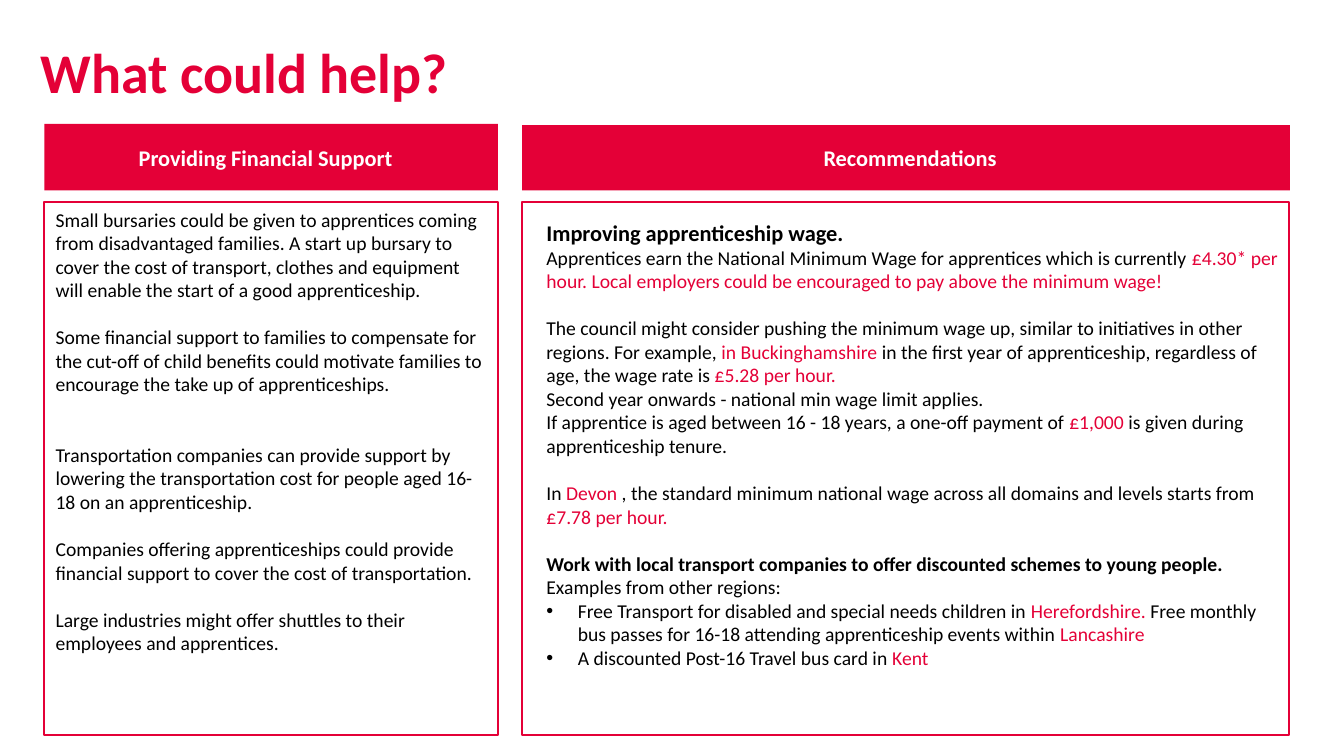
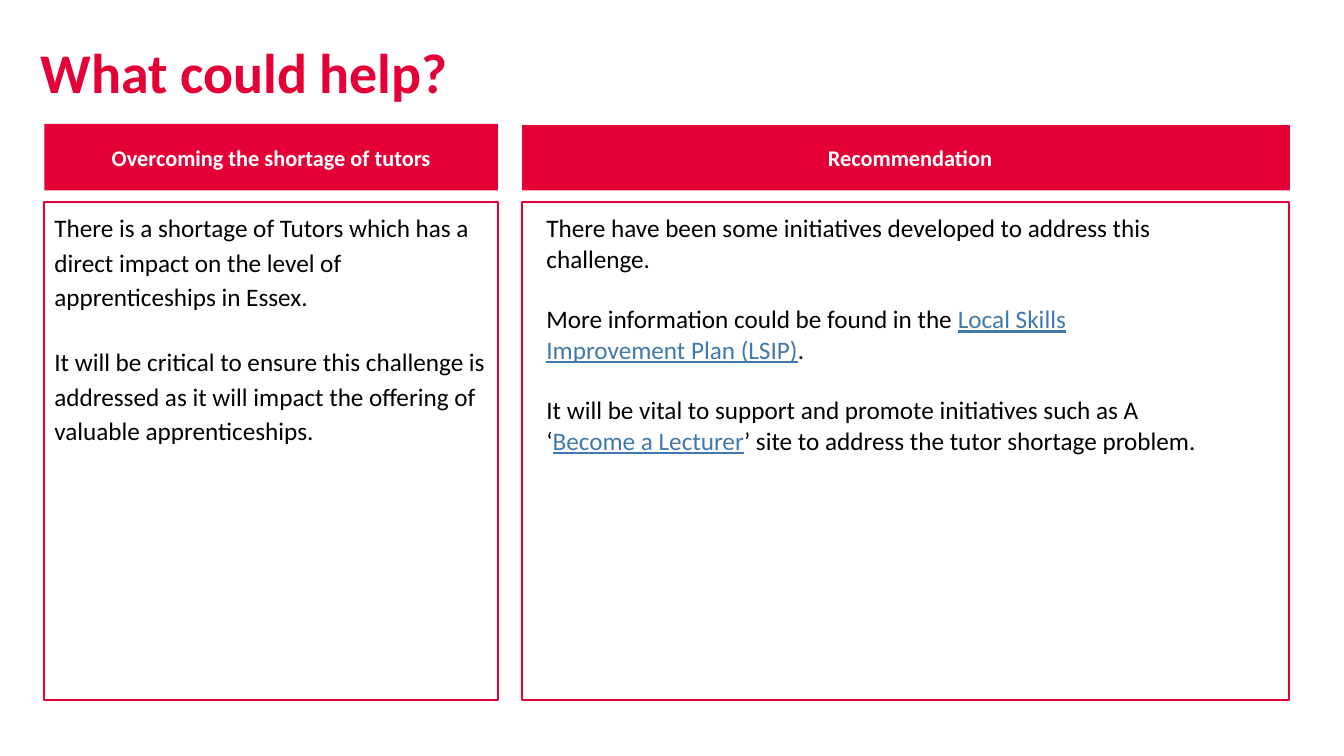
from dataclasses import dataclass

from lxml import etree
from pptx import Presentation
from pptx.dml.color import RGBColor
from pptx.enum.text import MSO_ANCHOR, MSO_AUTO_SIZE, PP_ALIGN
from pptx.oxml.ns import qn
from pptx.util import Cm, Pt

LEFT, CENTER = PP_ALIGN.LEFT, PP_ALIGN.CENTER
TOP, MIDDLE = MSO_ANCHOR.TOP, MSO_ANCHOR.MIDDLE
NO_FIT = MSO_AUTO_SIZE.NONE
COMPARISON_LAYOUT = 4


@dataclass(frozen=True)
class Theme:
    font: str = "Calibri"
    red: RGBColor = RGBColor(0xE4, 0x00, 0x37)
    link: RGBColor = RGBColor(0x41, 0x79, 0xAA)
    black: RGBColor = RGBColor(0, 0, 0)
    white: RGBColor = RGBColor(255, 255, 255)
    title: int = 40
    heading: int = 16
    body: int = 14
    large: int = 18
    frame: float = 1.5


theme = Theme()


def add_span(para, text, size=theme.body, color=theme.black, bold=False, underline=False):
    span = para.add_run()
    span.text = text
    span.font.name = theme.font
    span.font.size = Pt(size)
    span.font.color.rgb = color
    span.font.bold = bold
    span.font.underline = underline


def prepare(box, place, margins, anchor):
    """Place a placeholder and return its text frame."""
    box.left, box.top, box.width, box.height = [Cm(length) for length in place]
    frame = box.text_frame
    frame.word_wrap = True
    frame.auto_size = NO_FIT
    frame.vertical_anchor = anchor
    (frame.margin_left, frame.margin_top,
     frame.margin_right, frame.margin_bottom) = [Cm(length) for length in margins]
    return frame


# Shared geometry in centimetres: left, top, width, height
TITLE_PLACE = (1.02, 0.79, 14.45, 1.98)
BANDS = [(1.12, 3.12, 11.43, 1.68), (13.16, 3.15, 19.35, 1.65)]
FRAMES = [(1.12, 11.43), (13.16, 19.33)]
FRAME_TOP = 5.08
BULLET_INDENT = Cm(0.79)

# Gaps of one text line, in points
GAP = 16.8
LARGE_GAP = 21.8

# In each paragraph the spans alternate between plain and highlighted text
PAGES = [
    {
        "frame_height": 13.44,
        "size": theme.body,
        "highlight": {"color": theme.red},
        "columns": [
            {
                "heading": "Providing Financial Support",
                "band_margins": (0, 0, 0.28, 0),
                "margins": (0.28, 0.15, 0.18, 0),
                "paragraphs": [
                    {"spans": ["Small bursaries could be given to apprentices coming from disadvantaged "
                               "families. A start up bursary to cover the cost of transport, clothes and "
                               "equipment will enable the start of a good apprenticeship."]},
                    {"spans": ["Some financial support to families to compensate for the cut-off of child "
                               "benefits could motivate families to encourage the take up of "
                               "apprenticeships."], "before": GAP},
                    {"spans": ["Transportation companies can provide support by lowering the "
                               "transportation cost for people aged 16-18 on an apprenticeship."],
                     "before": 2 * GAP},
                    {"spans": ["Companies offering apprenticeships could provide financial support to "
                               "cover the cost of transportation."], "before": GAP},
                    {"spans": ["Large industries might offer shuttles to their employees and "
                               "apprentices."], "before": GAP},
                ],
            },
            {
                "heading": "Recommendations",
                "band_margins": (0.2, 0, 0, 0),
                "margins": (0.61, 0.43, 0.23, 0),
                "paragraphs": [
                    {"spans": ["Improving apprenticeship wage."], "bold": True, "size": theme.heading},
                    {"spans": ["Apprentices earn the National Minimum Wage for apprentices which is "
                               "currently ", "£4.30* per hour. Local employers could be encouraged to "
                               "pay above the minimum wage!"]},
                    {"spans": ["The council might consider pushing the minimum wage up, similar to "
                               "initiatives in other regions. For example, ", "in Buckinghamshire ",
                               "in the first year of apprenticeship, regardless of age, the wage rate is ",
                               "£5.28 per hour."], "before": GAP},
                    {"spans": ["Second year onwards - national min wage limit applies."]},
                    {"spans": ["If apprentice is aged between 16 - 18 years, a one-off payment of ",
                               "£1,000", " is given during apprenticeship tenure."]},
                    {"spans": ["In ", "Devon", " , the standard minimum national wage across all domains "
                               "and levels starts from ", "£7.78 per hour."], "before": GAP},
                    {"spans": ["Work with local transport companies to offer discounted schemes to "
                               "young people."], "before": GAP, "bold": True},
                    {"spans": ["Examples from other regions:"]},
                    {"spans": ["Free Transport for disabled and special needs children in ",
                               "Herefordshire. ", "Free monthly bus passes for 16-18 attending "
                               "apprenticeship events within ", "Lancashire"], "bullet": True},
                    {"spans": ["A discounted Post-16 Travel bus card in ", "Kent"], "bullet": True},
                ],
            },
        ],
    },
    {
        "frame_height": 12.55,
        "size": theme.large,
        "highlight": {"color": theme.link, "underline": True},
        "columns": [
            {
                "heading": "Overcoming the shortage of tutors",
                "band_margins": (0, 0, 0, 0),
                "margins": (0.25, 0.15, 0.18, 0),
                "line_spacing": 1.15,
                "paragraphs": [
                    {"spans": ["There is a shortage of Tutors which has a direct impact on the level of "
                               "apprenticeships in Essex."]},
                    {"spans": ["It will be critical to ensure this challenge is addressed as it will "
                               "impact the offering of valuable apprenticeships."], "before": 21.3},
                ],
            },
            {
                "heading": "Recommendation",
                "band_margins": (0.2, 0, 0, 0),
                "margins": (0.61, 0.28, 2.21, 0),
                "paragraphs": [
                    {"spans": ["There have been some initiatives developed to address this challenge."]},
                    {"spans": ["More information could be found in the ",
                               "Local Skills Improvement Plan (LSIP)", "."], "before": LARGE_GAP},
                    {"spans": ["It will be vital to support and promote initiatives such as A ‘",
                               "Become a Lecturer", "’ site to address the tutor shortage problem."],
                     "before": LARGE_GAP},
                ],
            },
        ],
    },
]

deck = Presentation()
deck.slide_width, deck.slide_height = Cm(33.87), Cm(19.05)

for content in PAGES:
    page = deck.slides.add_slide(deck.slide_layouts[COMPARISON_LAYOUT])
    title, *boxes = page.placeholders

    # Title
    para = prepare(title, TITLE_PLACE, (0, 0, 0, 0), MIDDLE).paragraphs[0]
    para.alignment = LEFT
    add_span(para, "What could help?", size=theme.title, color=theme.red, bold=True)

    for number, column in enumerate(content["columns"]):
        band, body = boxes[2 * number:2 * number + 2]

        # Heading band
        para = prepare(band, BANDS[number], column["band_margins"], MIDDLE).paragraphs[0]
        band.fill.solid()
        band.fill.fore_color.rgb = theme.red
        para.alignment = CENTER
        para.space_before = Pt(0)
        add_span(para, column["heading"], size=theme.heading, color=theme.white, bold=True)

        # Framed text
        left, width = FRAMES[number]
        place = (left, FRAME_TOP, width, content["frame_height"])
        frame = prepare(body, place, column["margins"], TOP)
        body.line.color.rgb = theme.red
        body.line.width = Pt(theme.frame)

        for index, item in enumerate(column["paragraphs"]):
            para = frame.paragraphs[0] if index == 0 else frame.add_paragraph()
            properties = para._p.get_or_add_pPr()
            indent = BULLET_INDENT if item.get("bullet") else 0
            properties.set("marL", str(indent))
            properties.set("indent", str(-indent))
            if indent:
                etree.SubElement(properties, qn("a:buFont"), typeface="Arial")
                etree.SubElement(properties, qn("a:buChar"), char="•")
            else:
                etree.SubElement(properties, qn("a:buNone"))
            para.alignment = LEFT
            para.line_spacing = column.get("line_spacing", 1.0)
            para.space_before = Pt(item.get("before", 0))
            for order, text in enumerate(item["spans"]):
                highlight = content["highlight"] if order % 2 else {}
                add_span(para, text, size=item.get("size", content["size"]),
                         bold=item.get("bold", False), **highlight)

deck.save("out.pptx")
